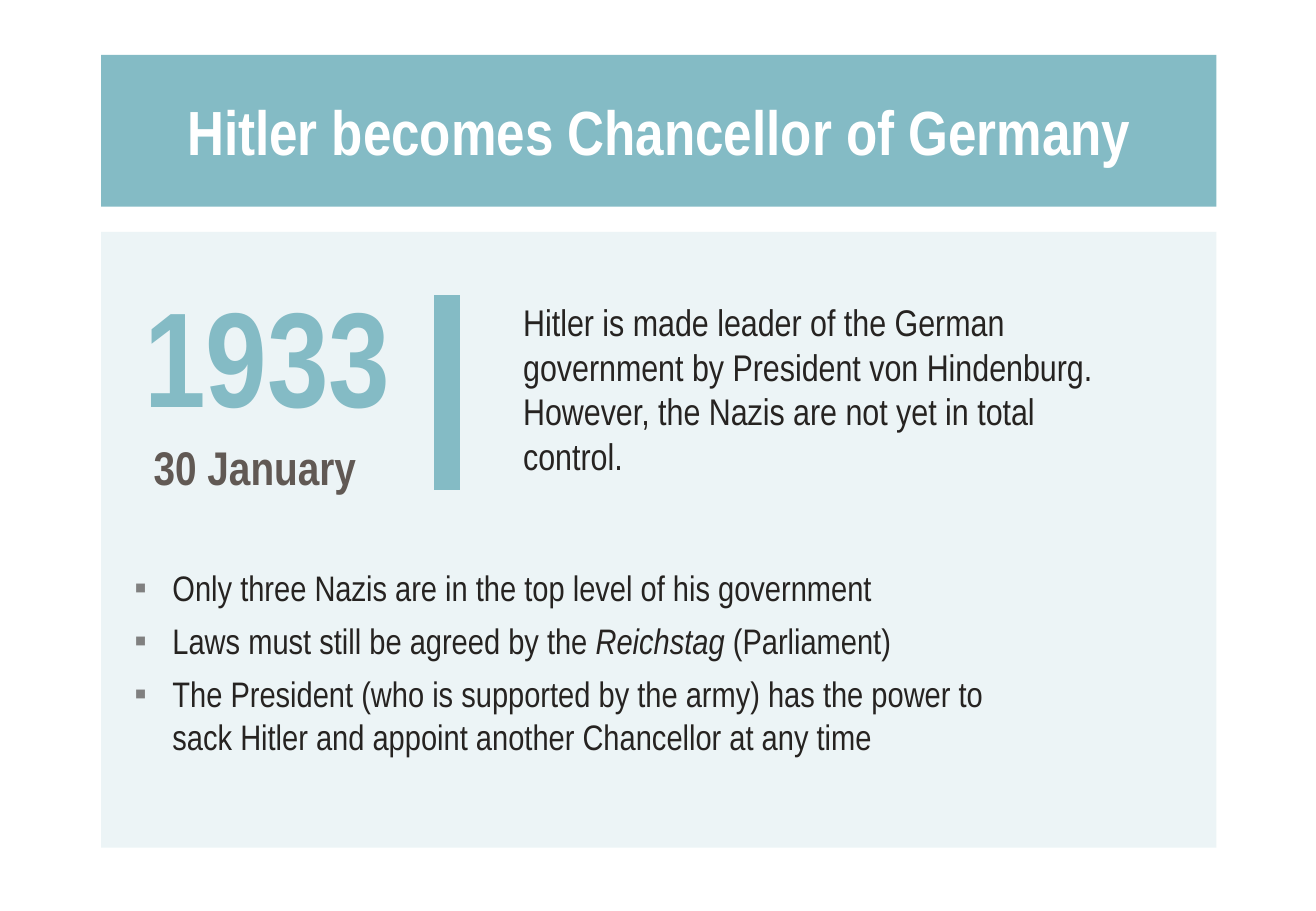
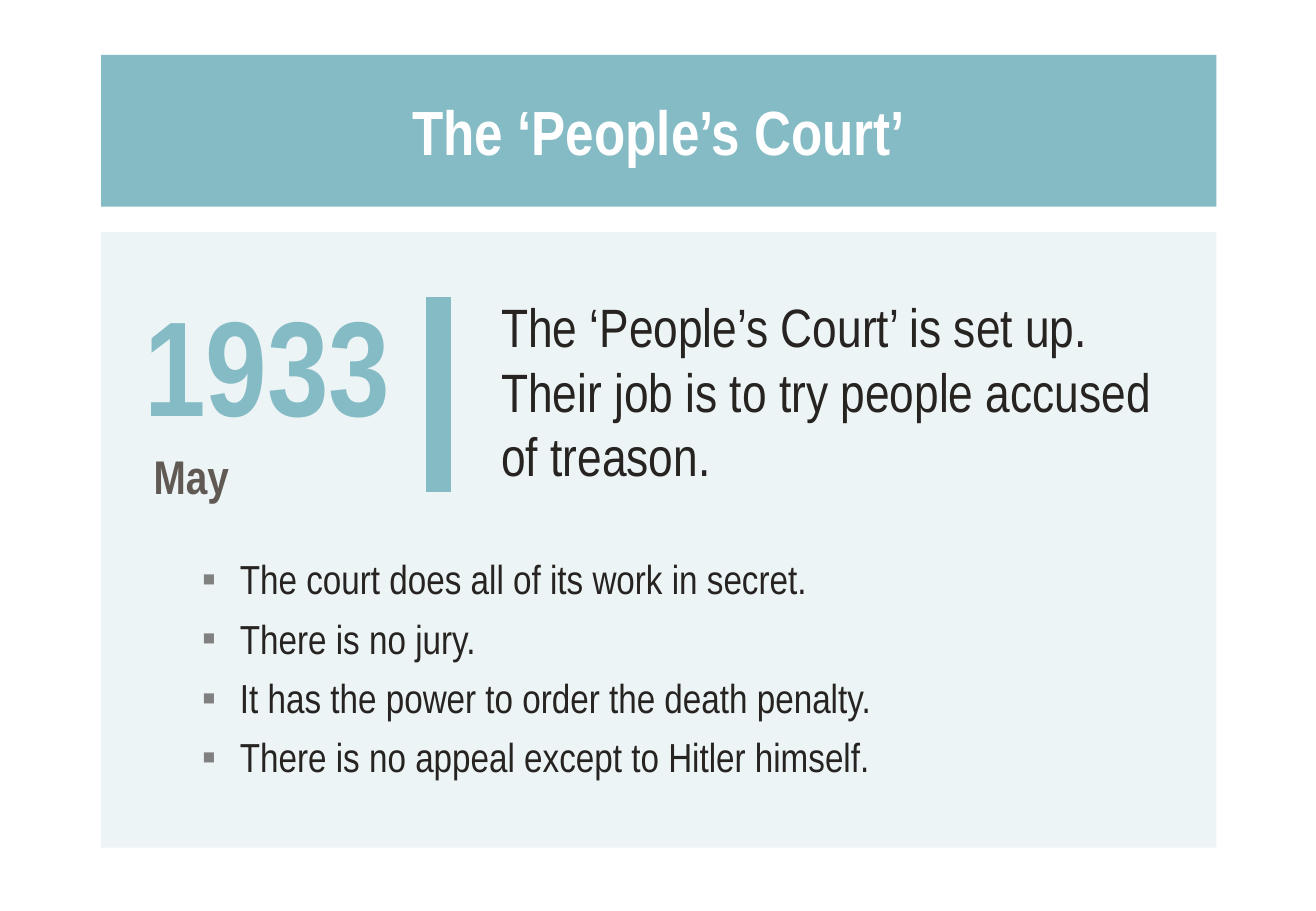
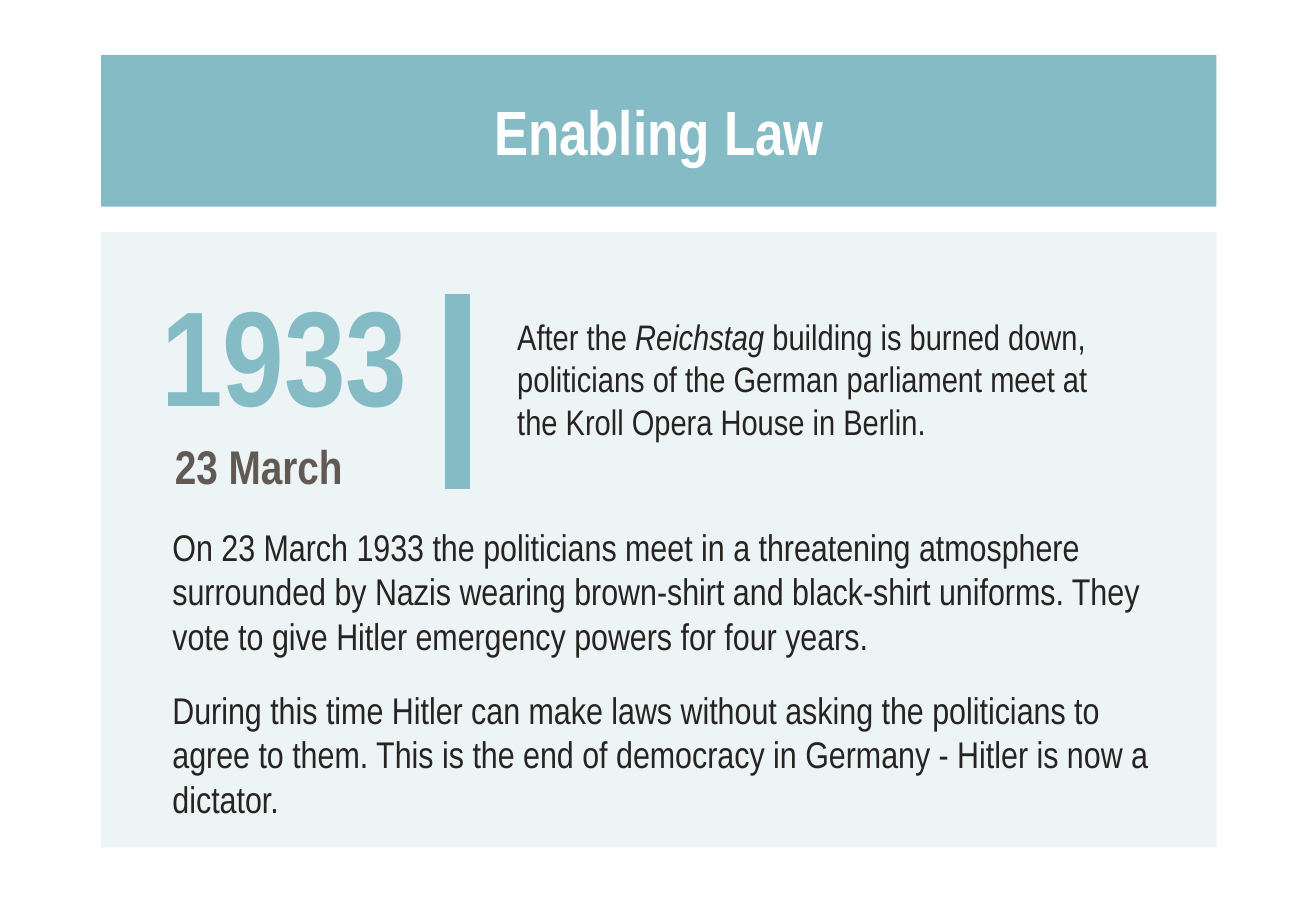
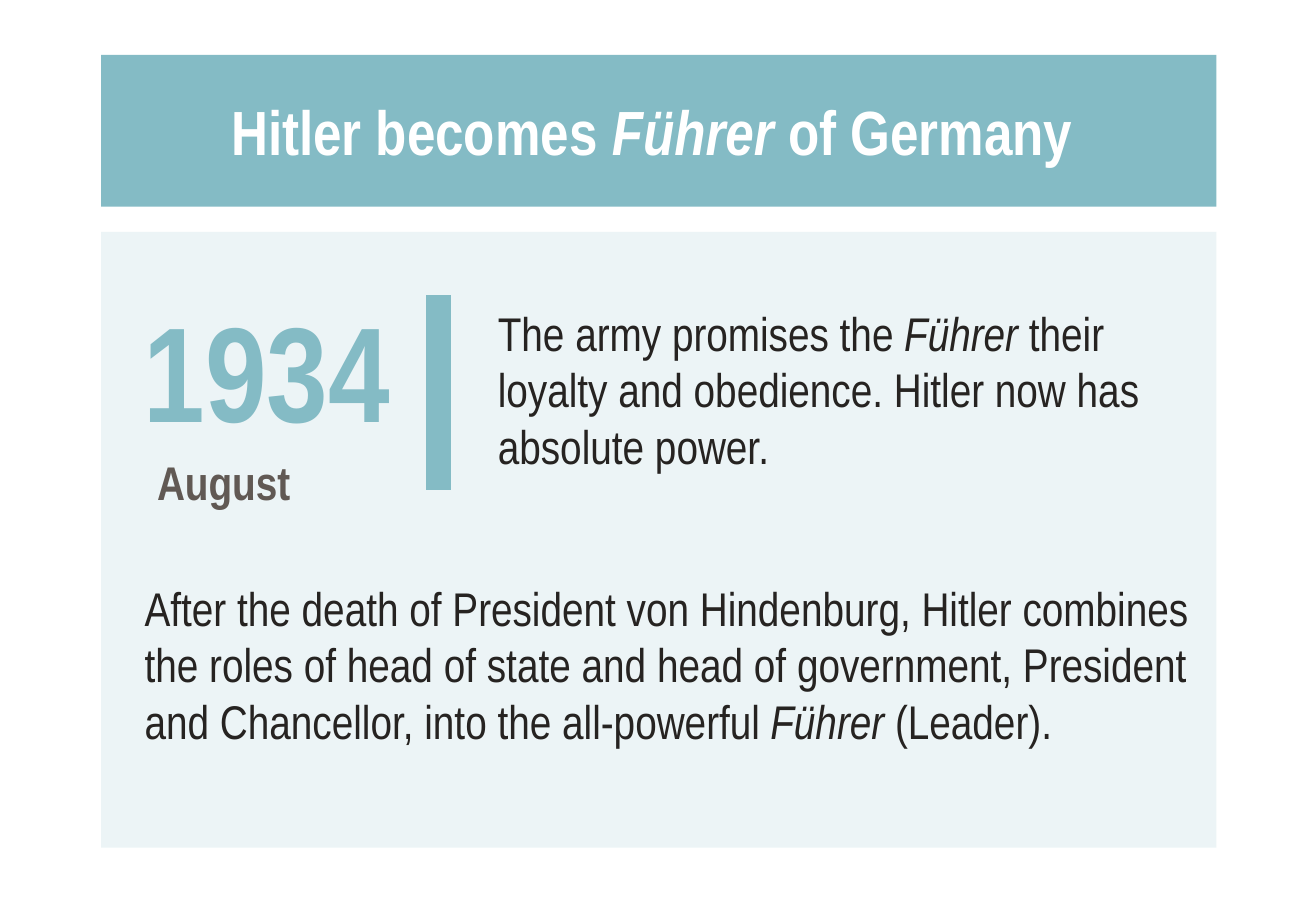
from lxml import etree
from pptx import Presentation
from pptx.dml.color import RGBColor
from pptx.enum.shapes import MSO_CONNECTOR, MSO_SHAPE
from pptx.enum.text import MSO_ANCHOR, MSO_AUTO_SIZE, PP_ALIGN
from pptx.oxml.ns import qn
from pptx.util import Pt

RECT = MSO_SHAPE.RECTANGLE
STRAIGHT = MSO_CONNECTOR.STRAIGHT
TOP, MIDDLE = MSO_ANCHOR.TOP, MSO_ANCHOR.MIDDLE
NO_FIT = MSO_AUTO_SIZE.NONE
CENTER = PP_ALIGN.CENTER

FONT = "Arial Narrow"
COLORS = {
    "teal": "84BBC5",
    "ink": "262321",
    "brown": "615954",
    "bullet": "808080",
    "white": "FFFFFF",
}
LEFT, WIDTH = 60, 661
INDENT = 22.5


def write(p, text, size, color="ink", bold=False):
    p.space_before = Pt(0)
    for i, part in enumerate(text.split("*")):
        r = p.add_run()
        r.text = part
        r.font.name = FONT
        r.font.size = Pt(size)
        r.font.bold = bold
        r.font.italic = i % 2 == 1
        r.font.color.rgb = RGBColor.from_string(COLORS[color])


def place(shape, box, anchor):
    shape.left, shape.top, shape.width, shape.height = [Pt(v) for v in box]
    tf = shape.text_frame
    tf.word_wrap = True
    tf.auto_size = NO_FIT
    tf.vertical_anchor = anchor
    return tf


slides = [
    {
        "title": "Hitler becomes Chancellor of Germany",
        "year": "1933", "date": "30 January", "date_indent": 5.5,
        "year_box": (78.5, 158, 188, 135),
        "bar": (265, 175),
        "summary": "Hitler is made leader of the German government by President von "
                   "Hindenburg. However, the Nazis are not yet in total control.",
        "summary_size": 22, "summary_box": (303, 163, 359, 135),
        "body": [
            "Only three Nazis are in the top level of his government",
            "Laws must still be agreed by the *Reichstag* (Parliament)",
            "The President (who is supported by the army) has the power to sack "
            "Hitler and appoint another Chancellor at any time",
        ],
        "body_size": 21, "body_box": (72.5, 332, 557, 108),
        "bullets": True, "gap": 6.3,
    },
    {
        "title": "The ‘People’s Court’",
        "year": "1933", "date": "May", "date_indent": 5.5,
        "year_box": (78.5, 163.5, 185, 135),
        "bar": (260, 176),
        "summary": "The ‘People’s Court’ is set up. Their job is to try people "
                   "accused of treason.",
        "summary_size": 32, "summary_box": (290, 164, 410, 135),
        "body": [
            "The court does all of its work in secret.",
            "There is no jury.",
            "It has the power to order the death penalty.",
            "There is no appeal except to Hitler himself.",
        ],
        "body_size": 24, "body_box": (112.5, 325, 584, 144),
        "bullets": True, "gap": 6.3,
    },
    {
        "title": "Enabling Law",
        "year": "1933", "date": "23 March", "date_indent": 8,
        "year_box": (88.5, 157.5, 212, 135),
        "bar": (271, 174.5),
        "summary": "After the *Reichstag* building is burned down, politicians of the "
                   "German parliament meet at the Kroll Opera House in Berlin.",
        "summary_size": 21, "summary_box": (299.5, 157, 380, 135),
        "body": [
            "On 23 March 1933 the politicians meet in a threatening atmosphere "
            "surrounded by Nazis wearing brown-shirt and black-shirt uniforms. They "
            "vote to give Hitler emergency powers for four years.",
            "During this time Hitler can make laws without asking the politicians to "
            "agree to them. This is the end of democracy in Germany - Hitler is now "
            "a dictator.",
        ],
        "body_size": 22, "body_box": (95, 307, 612, 186),
        "bullets": False, "gap": 17.5,
    },
    {
        "title": "Hitler becomes *Führer* of Germany ",
        "year": "1934", "date": "August", "date_indent": 8,
        "year_box": (78, 167, 193, 135),
        "bar": (260, 175),
        "summary": "The army promises the *Führer* their loyalty and obedience. "
                   "Hitler now has absolute power.",
        "summary_size": 28, "summary_box": (288, 163, 402, 135),
        "body": [
            "After the death of President von Hindenburg, Hitler combines the roles of "
            "head of state and head of government, President and Chancellor, into the "
            "all-powerful *Führer* (Leader).",
        ],
        "body_size": 28, "body_box": (78.5, 339.5, 644, 135),
        "bullets": False, "gap": 0,
    },
]

prs = Presentation()
prs.slide_width, prs.slide_height = Pt(780), Pt(540)
layout = prs.slide_layouts[1]

for number, data in enumerate(slides):
    s = prs.slides.add_slide(layout)

    if number == 0:
        panel = s.shapes.add_shape(RECT, Pt(LEFT), Pt(137.5), Pt(WIDTH), Pt(365))
        panel.shadow.inherit = False
        panel.line.fill.background()
        panel.fill.solid()
        panel.fill.fore_color.rgb = RGBColor.from_string(COLORS["teal"])
        clr = next(panel.element.spPr.iter(qn("a:srgbClr")))
        etree.SubElement(clr, qn("a:alpha"), val="15000")
        panel.element.nvSpPr.cNvPr.set("id", "20")
        layout.shapes.element.insert(2, panel.element)

    title = s.shapes.title
    tf = place(title, (LEFT, 32.5, WIDTH, 90), MIDDLE)
    title.fill.solid()
    title.fill.fore_color.rgb = RGBColor.from_string(COLORS["teal"])
    p = tf.paragraphs[0]
    p.alignment = CENTER
    write(p, data["title"], 37, color="white", bold=True)

    tf = place(s.shapes.add_textbox(0, 0, 0, 0), data["year_box"], TOP)
    write(tf.paragraphs[0], data["year"], 80, color="teal", bold=True)
    p = tf.add_paragraph()
    write(p, data["date"], 28, color="brown", bold=True)
    p.space_before = Pt(2)
    p._p.get_or_add_pPr().set("marL", str(Pt(data["date_indent"])))

    x, y = data["bar"]
    bar = s.shapes.add_connector(STRAIGHT, Pt(x), Pt(y), Pt(x), Pt(y + 115.5))
    bar.line.width = Pt(15)
    bar.line.color.rgb = RGBColor.from_string(COLORS["teal"])
    etree.SubElement(bar.element.spPr, qn("a:effectLst"))

    tf = place(s.shapes.add_textbox(0, 0, 0, 0), data["summary_box"], MIDDLE)
    write(tf.paragraphs[0], data["summary"], data["summary_size"])

    tf = place(s.placeholders[1], data["body_box"], TOP)
    for i, text in enumerate(data["body"]):
        p = tf.add_paragraph() if i else tf.paragraphs[0]
        write(p, text, data["body_size"])
        p.space_after = Pt(data["gap"])
        indent = Pt(INDENT) if data["bullets"] else 0
        pPr = p._p.get_or_add_pPr()
        pPr.set("marL", str(indent))
        pPr.set("indent", str(-indent))
        if data["bullets"]:
            clr = etree.SubElement(pPr, qn("a:buClr"))
            etree.SubElement(clr, qn("a:srgbClr"), val=COLORS["bullet"])
            etree.SubElement(pPr, qn("a:buChar"), char="▪")
        else:
            etree.SubElement(pPr, qn("a:buNone"))

prs.save("out.pptx")
